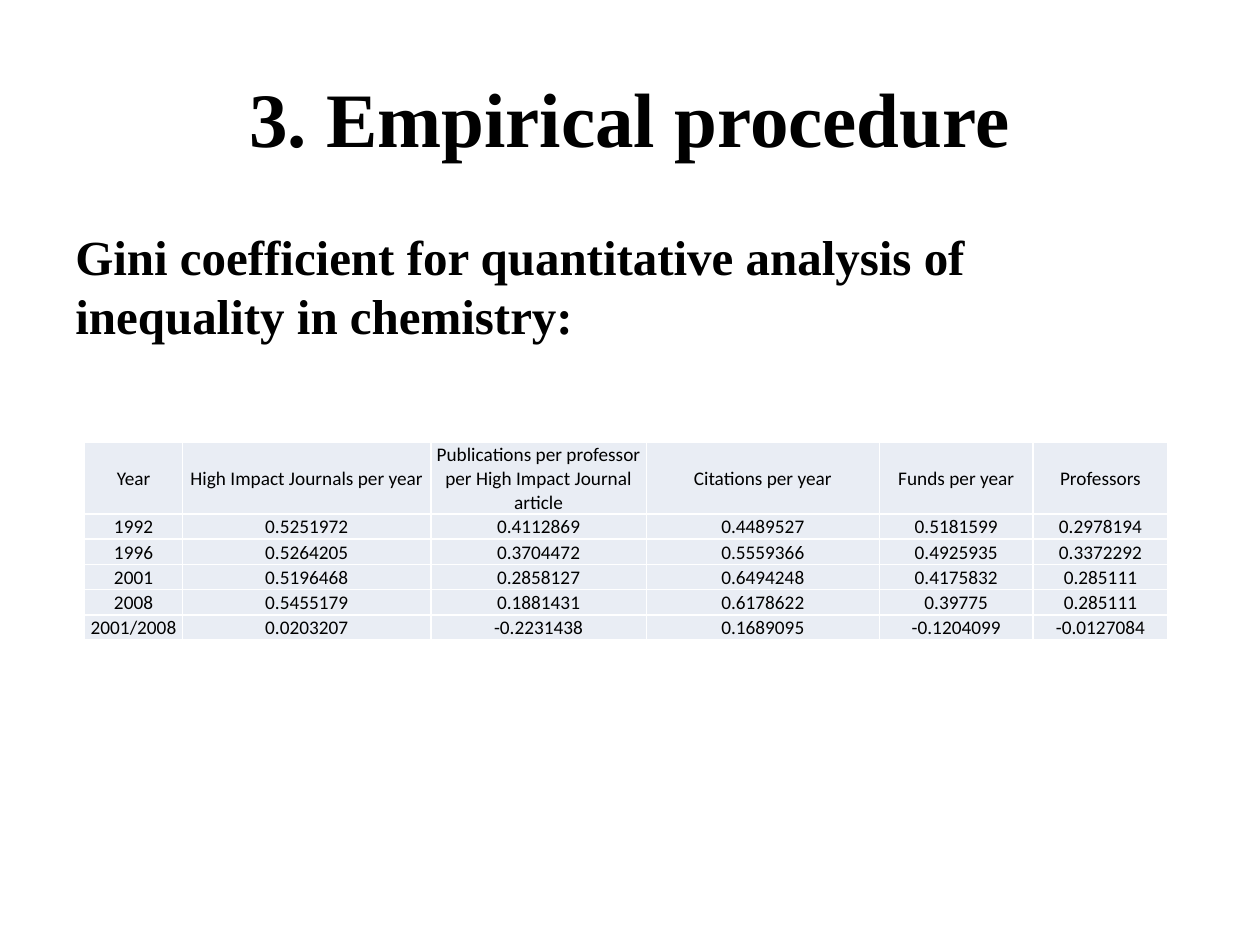
from pptx import Presentation
from pptx.dml.color import RGBColor
from pptx.enum.text import MSO_ANCHOR as Anchor, PP_ALIGN as Align
from pptx.oxml import parse_xml
from pptx.oxml.ns import nsdecls
from pptx.util import Inches, Pt

BLACK = RGBColor(0x00, 0x00, 0x00)
WHITE = RGBColor(0xFF, 0xFF, 0xFF)
PALE_BLUE = RGBColor(0xE9, 0xED, 0xF4)
SERIF, SANS = "Times New Roman", "Calibri"

TITLE = "3. Empirical procedure"
LEAD = "Gini coefficient for quantitative analysis of inequality in chemistry:"
GINI = [
    ("Year", "High Impact Journals per year",
     "Publications per professor per High Impact Journal article",
     "Citations per year", "Funds per year", "Professors"),
    ("1992", "0.5251972", "0.4112869", "0.4489527", "0.5181599", "0.2978194"),
    ("1996", "0.5264205", "0.3704472", "0.5559366", "0.4925935", "0.3372292"),
    ("2001", "0.5196468", "0.2858127", "0.6494248", "0.4175832", "0.285111"),
    ("2008", "0.5455179", "0.1881431", "0.6178622", "0.39775", "0.285111"),
    ("2001/2008", "0.0203207", "-0.2231438", "0.1689095", "-0.1204099", "-0.0127084"),
]
COL_WIDTHS = (0.78, 1.97, 1.71, 1.85, 1.22, 1.07)
HEADER_HEIGHT, ROW_HEIGHT = 0.57, 0.2
TABLE_LEFT, TABLE_TOP = 0.67, 3.51
MARGIN = 0.5


def write(tf, text, font=SANS, size=11, bold=False, align=Align.CENTER, before=0):
    tf.word_wrap = True
    p = tf.paragraphs[0]
    p.alignment = align
    p.space_before = Pt(before)
    r = p.add_run()
    r.text = text
    r.font.name, r.font.size, r.font.bold = font, Pt(size), bold
    r.font.color.rgb = BLACK


def add_box(slide, top, height, text, anchor=Anchor.TOP, **style):
    width = prs.slide_width - 2 * Inches(MARGIN)
    sp = slide.shapes.add_textbox(Inches(MARGIN), Inches(top), width, Inches(height))
    sp.text_frame.vertical_anchor = anchor
    write(sp.text_frame, text, font=SERIF, bold=True, **style)


def style_cell(cell):
    cell.margin_left = cell.margin_right = cell.margin_top = Inches(0.01)
    cell.margin_bottom = 0
    cell.vertical_anchor = Anchor.MIDDLE
    cell.fill.solid()
    cell.fill.fore_color.rgb = PALE_BLUE
    # Borders come before the fill in the cell properties
    tc_pr = cell._tc.get_or_add_tcPr()
    for i, side in enumerate(("lnL", "lnR", "lnT", "lnB")):
        tc_pr.insert(i, parse_xml(
            f'<a:{side} {nsdecls("a")} w="{Pt(1)}"><a:solidFill>'
            f'<a:srgbClr val="{WHITE}"/></a:solidFill></a:{side}>'))


prs = Presentation()
prs.slide_width, prs.slide_height = Inches(10), Inches(7.5)
s = prs.slides.add_slide(prs.slide_layouts[6])

# Title and lead sentence
add_box(s, 0.3, 1.25, TITLE, anchor=Anchor.MIDDLE, size=44)
add_box(s, 1.75, 4.95, LEAD, size=28, align=Align.LEFT, before=5.6)

# Table of Gini coefficients
row_heights = [HEADER_HEIGHT] + [ROW_HEIGHT] * (len(GINI) - 1)
table = s.shapes.add_table(
    len(GINI), len(COL_WIDTHS), Inches(TABLE_LEFT), Inches(TABLE_TOP),
    Inches(sum(COL_WIDTHS)), Inches(sum(row_heights))).table
table.first_row = table.horz_banding = False
for col, width in zip(table.columns, COL_WIDTHS):
    col.width = Inches(width)
for row, height, values in zip(table.rows, row_heights, GINI):
    row.height = Inches(height)
    for cell, value in zip(row.cells, values):
        style_cell(cell)
        write(cell.text_frame, value)

prs.save("out.pptx")
